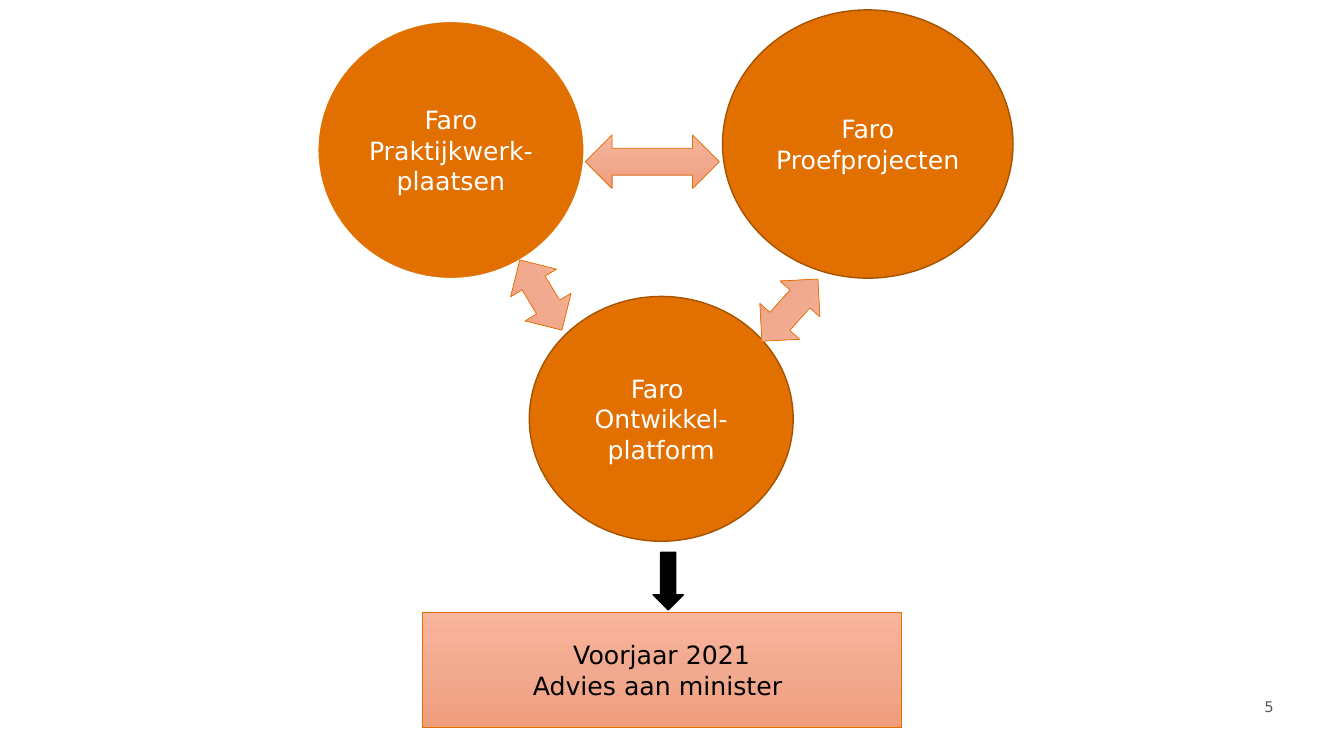
from copy import deepcopy

from pptx import Presentation
from pptx.dml.color import RGBColor
from pptx.enum.shapes import MSO_SHAPE
from pptx.enum.text import MSO_ANCHOR, PP_ALIGN
from pptx.oxml.ns import qn
from pptx.util import Cm, Pt

OVAL = MSO_SHAPE.OVAL
RECT = MSO_SHAPE.RECTANGLE
DOUBLE = MSO_SHAPE.LEFT_RIGHT_ARROW
DOWN = MSO_SHAPE.DOWN_ARROW
MIDDLE = MSO_ANCHOR.MIDDLE
BOTTOM = MSO_ANCHOR.BOTTOM
CENTER = PP_ALIGN.CENTER
RIGHT = PP_ALIGN.RIGHT

COLORS = {
    "orange": "E17000",
    "brown": "A65300",
    "white": "FFFFFF",
    "black": "000000",
    "gray": "595959",
}
SALMON = [(0, "FAB59D"), (0.5, "F1AA90"), (1, "F09D7C")]


def apply(target, values):
    for name, value in values.items():
        setattr(target, name, value)


def tint(name):
    return RGBColor.from_string(COLORS[name])


class Board:
    font = "DejaVu Sans"

    def __init__(self, slide):
        self.slide = slide

    def label(self, frame, lines, color, size=18, align=CENTER, **extra):
        apply(frame, {"word_wrap": True, "vertical_anchor": MIDDLE} | extra)
        frame.text = "\n".join(lines)
        for para in frame.paragraphs:
            para.alignment = align
            apply(para.font, {"name": self.font, "size": Pt(size)})
            para.font.color.rgb = tint(color)

    def shape(self, kind, place, fill, line, width):
        item = self.slide.shapes.add_shape(kind, *map(Cm, place))
        item.shadow.inherit = False
        if fill:
            item.fill.solid()
            item.fill.fore_color.rgb = tint(fill)
        else:
            self.blend(item)
        item.line.color.rgb = tint(line)
        item.line.width = Pt(width)
        return item

    def blend(self, item):
        item.fill.gradient()
        item.fill.gradient_angle = 270
        stops = item.element.spPr.find(".//" + qn("a:gsLst"))
        stops.insert(1, deepcopy(stops[0]))
        for stop, (spot, color) in zip(item.fill.gradient_stops, SALMON):
            stop.position = spot
            stop.color.rgb = RGBColor.from_string(color)

    def circle(self, place, lines, line="brown", width=1):
        item = self.shape(OVAL, place, "orange", line, width)
        self.label(item.text_frame, lines, "white")

    def panel(self, place, lines):
        item = self.shape(RECT, place, None, "orange", 0.5)
        self.label(item.text_frame, lines, "black")

    def link(self, place, angle=0):
        item = self.shape(DOUBLE, place, None, "orange", 0.5)
        item.rotation = angle

    def arrow(self, place):
        self.shape(DOWN, place, "black", "black", 1)

    def number(self, place, text):
        box = self.slide.shapes.add_textbox(*map(Cm, place))
        self.label(box.text_frame, [text], "gray", 10.5, RIGHT,
                   vertical_anchor=BOTTOM, margin_right=0)


def main():
    deck = Presentation()
    apply(deck, {"slide_width": Cm(33.87), "slide_height": Cm(19.05)})
    board = Board(deck.slides.add_slide(deck.slide_layouts[6]))

    board.number((18.21, 17.27, 13.89, 0.89), "5")
    board.circle((18.21, 0.25, 7.32, 6.76), ["Faro", "Proefprojecten"])
    board.circle((8, 0.53, 6.73, 6.5), ["Faro", "Praktijkwerk-plaatsen"],
                 "white", 1.5)
    board.circle((13.34, 7.47, 6.65, 6.17), ["Faro ", "Ontwikkel-platform"])
    board.panel((10.64, 15.42, 12.07, 2.92),
                ["Voorjaar 2021", "Advies aan minister "])
    board.link((14.75, 3.4, 3.38, 1.35))
    board.link((18.85, 7.14, 2.11, 1.35), 132)
    board.link((12.6, 6.76, 2.06, 1.35), 59)
    board.arrow((16.46, 13.92, 0.76, 1.45))

    deck.save("out.pptx")


if __name__ == "__main__":
    main()
